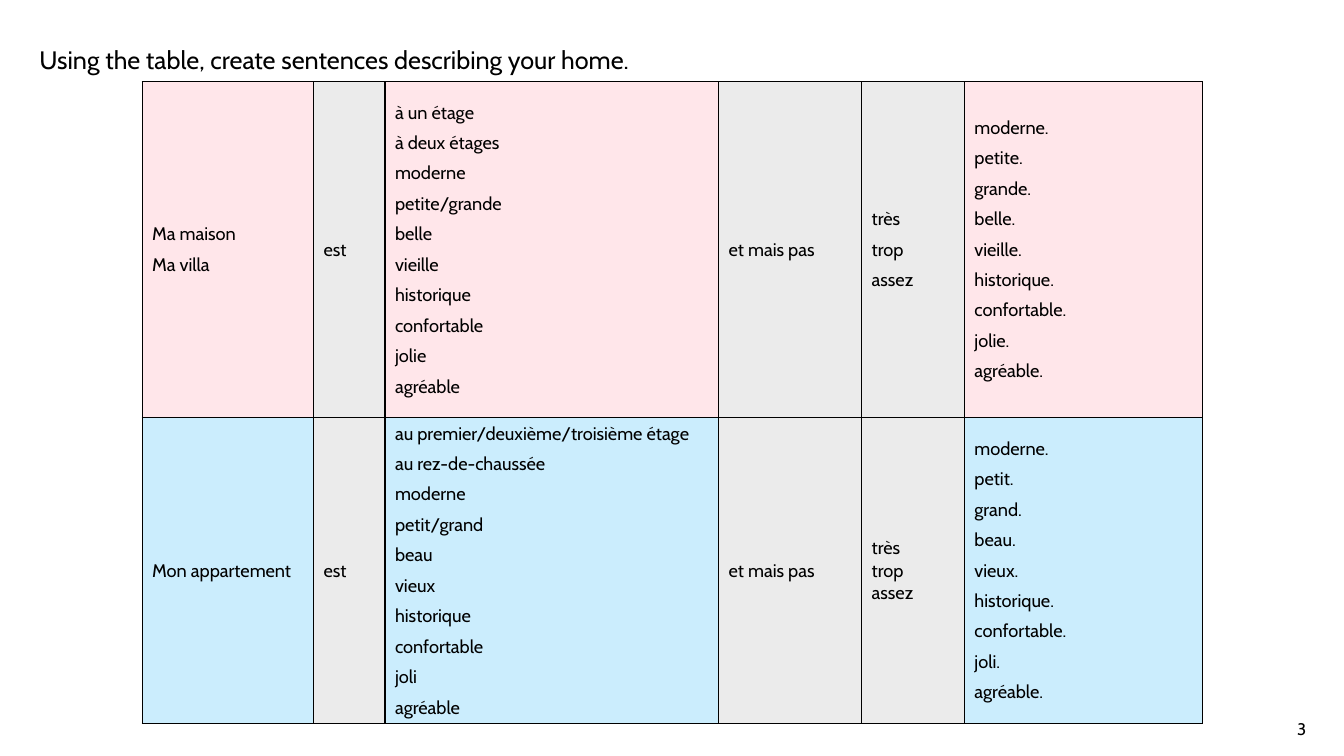
"""Build a slide with a sentence-building table about homes."""
from dataclasses import dataclass

from lxml import etree
from pptx import Presentation, util as u
from pptx.dml.color import RGBColor
from pptx.enum import text
from pptx.oxml import ns


@dataclass(frozen=True)
class Theme:
    font: str = "Cabin"
    ink: str = "000000"
    pink: str = "FFE6EA"
    blue: str = "CBEDFD"
    grey: str = "EBEBEB"
    title: int = 18
    body: int = 13
    small: int = 12
    gap: int = 6
    line: int = 1


class Deck:
    def __init__(self, theme):
        self.theme = theme
        self.show = Presentation()
        self.show.slide_width, self.show.slide_height = u.Pt(960), u.Pt(540)
        self.slide = self.show.slides.add_slide(self.show.slide_layouts[6])

    def run(self, para, words, size):
        run = para.add_run()
        run.text = words
        run.font.name = self.theme.font
        run.font.size = u.Pt(size)
        run.font.color.rgb = RGBColor.from_string(self.theme.ink)

    def label(self, words, box, size, align=text.PP_ALIGN.LEFT):
        frame = self.slide.shapes.add_textbox(*map(u.Pt, box)).text_frame
        frame.word_wrap = True
        frame.margin_left = frame.margin_right = 0
        frame.margin_top = frame.margin_bottom = 0
        frame.paragraphs[0].alignment = align
        self.run(frame.paragraphs[0], words, size)

    def border(self, cell):
        props = cell._tc.get_or_add_tcPr()
        for side in ("a:lnL", "a:lnR", "a:lnT", "a:lnB"):
            line = etree.SubElement(props, ns.qn(side), w=str(u.Pt(self.theme.line)))
            fill = etree.SubElement(line, ns.qn("a:solidFill"))
            etree.SubElement(fill, ns.qn("a:srgbClr"), val=self.theme.ink)

    def cell(self, cell, lines, fill, gap):
        self.border(cell)
        cell.fill.solid()
        cell.fill.fore_color.rgb = RGBColor.from_string(fill)
        cell.vertical_anchor = text.MSO_ANCHOR.MIDDLE
        frame = cell.text_frame
        for i, words in enumerate(lines):
            para = frame.add_paragraph() if i else frame.paragraphs[0]
            para.space_after = u.Pt(gap)
            self.run(para, words, self.theme.body)

    def table(self, left, top, widths, heights, rows, fills, tight):
        grid = self.slide.shapes.add_table(
            len(heights), len(widths), u.Pt(left), u.Pt(top),
            u.Pt(sum(widths)), u.Pt(sum(heights))).table
        grid.first_row = grid.horz_banding = False
        for col, width in zip(grid.columns, widths):
            col.width = u.Pt(width)
        for r, (height, row) in enumerate(zip(heights, rows)):
            grid.rows[r].height = u.Pt(height)
            for c, lines in enumerate(row):
                gap = 0 if (r, c) in tight else self.theme.gap
                self.cell(grid.cell(r, c), lines, fills[r][c], gap)


VERB = ["est"]
LINK = ["et mais pas"]
DEGREE = ["très", "trop", "assez"]
HOUSE = ["moderne", "petite/grande", "belle", "vieille", "historique",
         "confortable", "jolie", "agréable"]
FLAT = ["moderne", "petit/grand", "beau", "vieux", "historique",
        "confortable", "joli", "agréable"]


def row(homes, places, traits):
    ends = [word + "." for trait in traits for word in trait.split("/")]
    return [homes, VERB, places + traits, LINK, DEGREE, ends]


def main():
    look = Theme()
    deck = Deck(look)
    deck.label("Using the table, create sentences describing your home.",
               (28.1, 31.7, 552, 26.6), look.title)
    rows = [
        row(["Ma maison", "Ma villa"], ["à un étage", "à deux étages"], HOUSE),
        row(["Mon appartement"],
            ["au premier/deuxième/troisième étage", "au rez-de-chaussée"], FLAT),
    ]
    fills = [[hue, look.grey, hue, look.grey, look.grey, hue]
             for hue in (look.pink, look.blue)]
    deck.table(101.5, 58.3, [122.4, 51.1, 238.3, 102.2, 73.4, 169.9],
               [240, 218.5], rows, fills, {(1, 0), (1, 4)})
    deck.label("3", (876.2, 513.4, 56.9, 14.4), look.small, text.PP_ALIGN.RIGHT)
    deck.show.save("out.pptx")


if __name__ == "__main__":
    main()
